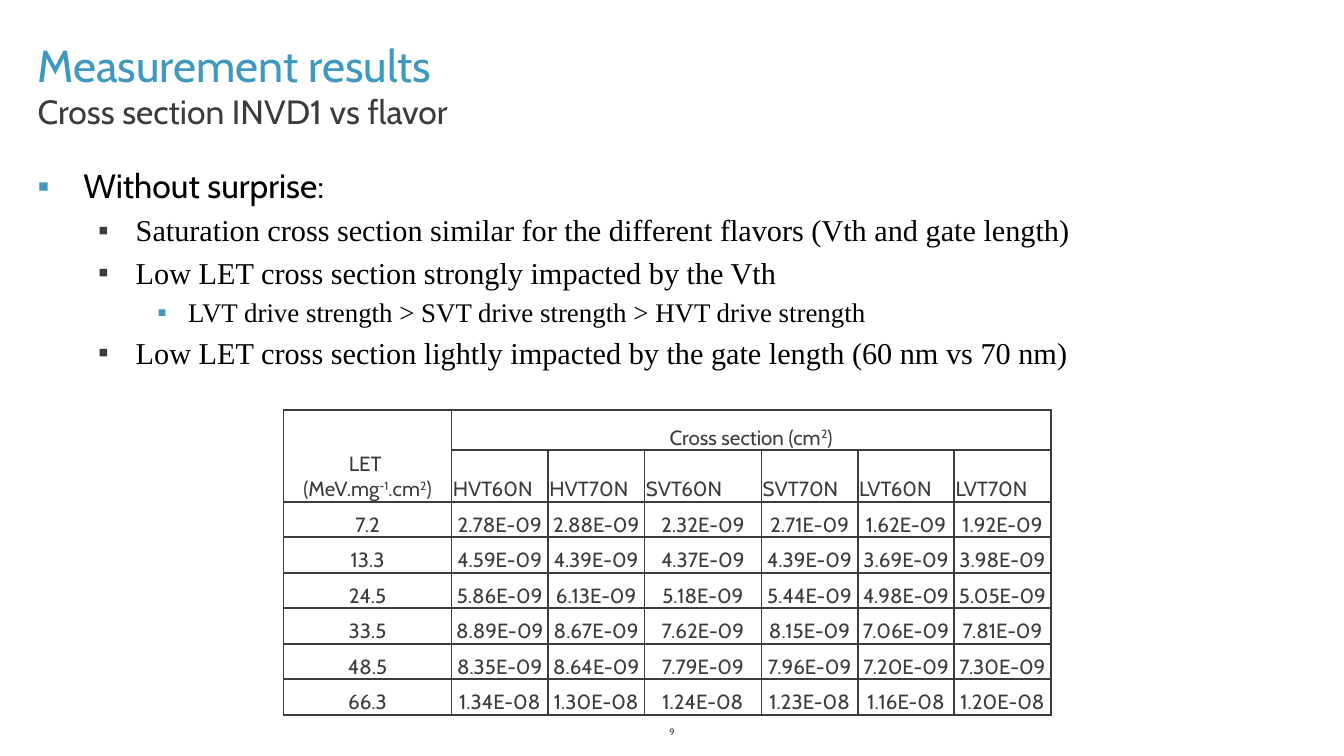
from dataclasses import dataclass

from lxml import etree
from pptx import Presentation
from pptx import util as u
from pptx.dml.color import RGBColor
from pptx.enum import text
from pptx.oxml import ns


@dataclass(frozen=True)
class Theme:
    accent: str = "3F98BD"
    dark: str = "3C3C3B"
    black: str = "000000"
    sans: str = "Cabin"
    serif: str = "Times New Roman"
    title: float = 24
    subtitle: float = 18
    finding: float = 18
    detail: float = 16.2
    subdetail: float = 14.4
    cell: float = 11
    page: float = 5
    border: float = 1


THEME = Theme()

SLIDE_WIDTH = 10
SLIDE_HEIGHT = SLIDE_WIDTH * 9 / 16

LEVELS = [
    (0.34, -0.34, THEME.accent, THEME.sans, THEME.finding),
    (0.73, -0.28, THEME.dark, THEME.serif, THEME.detail),
    (1.12, -0.23, THEME.accent, THEME.serif, THEME.subdetail),
]

FINDINGS = [
    (0, "Without surprise:"),
    (1, "Saturation cross section similar for the different flavors (Vth and gate length)"),
    (1, "Low LET cross section strongly impacted by the Vth"),
    (2, "LVT drive strength > SVT drive strength > HVT drive strength"),
    (1, "Low LET cross section lightly impacted by the gate length (60 nm vs 70 nm)"),
]

FLAVORS = ["HVT60N", "HVT70N", "SVT60N", "SVT70N", "LVT60N", "LVT70N"]

MEASUREMENTS = [
    ["7.2", "2.78E-09", "2.88E-09", "2.32E-09", "2.71E-09", "1.62E-09", "1.92E-09"],
    ["13.3", "4.59E-09", "4.39E-09", "4.37E-09", "4.39E-09", "3.69E-09", "3.98E-09"],
    ["24.5", "5.86E-09", "6.13E-09", "5.18E-09", "5.44E-09", "4.98E-09", "5.05E-09"],
    ["33.5", "8.89E-09", "8.67E-09", "7.62E-09", "8.15E-09", "7.06E-09", "7.81E-09"],
    ["48.5", "8.35E-09", "8.64E-09", "7.79E-09", "7.96E-09", "7.20E-09", "7.30E-09"],
    ["66.3", "1.34E-08", "1.30E-08", "1.24E-08", "1.23E-08", "1.16E-08", "1.20E-08"],
]

TABLE_WIDTH, TABLE_HEIGHT = 5.71, 2.15
LET_WIDTH, WIDE_WIDTH, TOP_HEIGHT = 1.25, 0.87, 0.3
FLAVOR_WIDTH = (TABLE_WIDTH - LET_WIDTH - WIDE_WIDTH) / 5
ROW_HEIGHT = (TABLE_HEIGHT - TOP_HEIGHT) / 7
COLUMN_WIDTHS = [LET_WIDTH] + [FLAVOR_WIDTH] * 2 + [WIDE_WIDTH] + [FLAVOR_WIDTH] * 3
ROW_HEIGHTS = [TOP_HEIGHT] + [ROW_HEIGHT] * 7


def add_run(paragraph, words, size, color, font, raised=False):
    run = paragraph.add_run()
    run.text = words
    run.font.size = u.Pt(size)
    run.font.name = font
    run.font.color.rgb = RGBColor.from_string(color)
    if raised:
        run._r.get_or_add_rPr().set("baseline", "30000")


def place(shape, left, top, width, height, anchor):
    shape.left, shape.top = u.Inches(left), u.Inches(top)
    shape.width, shape.height = u.Inches(width), u.Inches(height)
    frame = shape.text_frame
    frame.word_wrap = True
    frame.auto_size = text.MSO_AUTO_SIZE.NONE
    frame.vertical_anchor = anchor
    return frame


def set_bullet(paragraph, margin, indent, color=None):
    props = paragraph._p.get_or_add_pPr()
    props.set("marL", str(u.Inches(margin)))
    props.set("indent", str(u.Inches(indent)))
    if color is None:
        etree.SubElement(props, ns.qn("a:buNone"))
        return
    tint = etree.SubElement(props, ns.qn("a:buClr"))
    etree.SubElement(tint, ns.qn("a:srgbClr"), val=color)
    etree.SubElement(props, ns.qn("a:buFont"), typeface="Arial")
    etree.SubElement(props, ns.qn("a:buChar"), char="▪")


def add_title(title):
    heading = place(title, 0.18, 0.23, 9.57, 0.5, text.MSO_ANCHOR.BOTTOM).paragraphs[0]
    heading.alignment = text.PP_ALIGN.LEFT
    add_run(heading, "Measurement results", THEME.title, THEME.accent, THEME.sans)


def add_subtitle(subtitle):
    line = place(subtitle, 0.18, 0.63, 9.57, 0.4, text.MSO_ANCHOR.TOP).paragraphs[0]
    set_bullet(line, 0, 0)
    line.space_before = u.Pt(0)
    add_run(line, "Cross section INVD1 vs flavor", THEME.subtitle, THEME.dark, THEME.sans)


def add_findings(body):
    frame = place(body, 0.18, 1.18, 9.57, 3.85, text.MSO_ANCHOR.TOP)
    for index, (level, words) in enumerate(FINDINGS):
        finding = frame.add_paragraph() if index else frame.paragraphs[0]
        margin, indent, bullet_color, font, size = LEVELS[level]
        finding.level = level
        set_bullet(finding, margin, indent, bullet_color)
        if index == 0:
            finding.space_before = u.Pt(0)
        add_run(finding, words, size, THEME.black, font)


def add_page_number(slide):
    box = slide.shapes.add_textbox(0, 0, 0, 0)
    number = place(box, 4.53, 5.35, 0.94, 0.19, text.MSO_ANCHOR.MIDDLE).paragraphs[0]
    number.alignment = text.PP_ALIGN.CENTER
    add_run(number, "9", THEME.page, THEME.dark, THEME.sans)


def format_cell(cell):
    cell.margin_left = cell.margin_right = cell.margin_top = u.Inches(0.01)
    cell.margin_bottom = 0
    cell.vertical_anchor = text.MSO_ANCHOR.BOTTOM
    props = cell._tc.get_or_add_tcPr()
    for side in ("lnL", "lnR", "lnT", "lnB"):
        line = etree.SubElement(props, ns.qn(f"a:{side}"), w=str(u.Pt(THEME.border)))
        fill = etree.SubElement(line, ns.qn("a:solidFill"))
        etree.SubElement(fill, ns.qn("a:srgbClr"), val=THEME.dark)
    cell.fill.background()


def write_cell(cell, *parts, align=text.PP_ALIGN.CENTER):
    paragraph = cell.text_frame.paragraphs[0]
    paragraph.alignment = align
    for part in parts:
        if part == "\n":
            paragraph.add_line_break()
        else:
            add_run(paragraph, part, THEME.cell, THEME.dark, THEME.sans, part in ("-1", "2"))


def add_cross_sections(slide):
    table = slide.shapes.add_table(
        len(ROW_HEIGHTS), len(COLUMN_WIDTHS), u.Inches(2.11), u.Inches(3.05),
        u.Inches(TABLE_WIDTH), u.Inches(TABLE_HEIGHT)).table
    table.first_row = table.horz_banding = False
    for column, width in zip(table.columns, COLUMN_WIDTHS):
        column.width = u.Inches(width)
    for row, height in zip(table.rows, ROW_HEIGHTS):
        row.height = u.Inches(height)
    for cell in table.iter_cells():
        format_cell(cell)

    table.cell(0, 0).merge(table.cell(1, 0))
    table.cell(0, 1).merge(table.cell(0, len(FLAVORS)))
    write_cell(table.cell(0, 0), "LET ", "\n", "(MeV.mg", "-1", ".cm", "2", ")")
    write_cell(table.cell(0, 1), "Cross section (cm", "2", ")")
    for column, flavor in enumerate(FLAVORS, 1):
        write_cell(table.cell(1, column), flavor, align=text.PP_ALIGN.LEFT)
    for row, values in enumerate(MEASUREMENTS, 2):
        for column, value in enumerate(values):
            write_cell(table.cell(row, column), value)


def main():
    deck = Presentation()
    deck.slide_width, deck.slide_height = u.Inches(SLIDE_WIDTH), u.Inches(SLIDE_HEIGHT)
    slide = deck.slides.add_slide(deck.slide_layouts.get_by_name("Two Content"))
    title, body, subtitle = slide.placeholders
    add_title(title)
    add_findings(body)
    add_page_number(slide)
    add_subtitle(subtitle)
    add_cross_sections(slide)
    deck.save("out.pptx")


if __name__ == "__main__":
    main()
